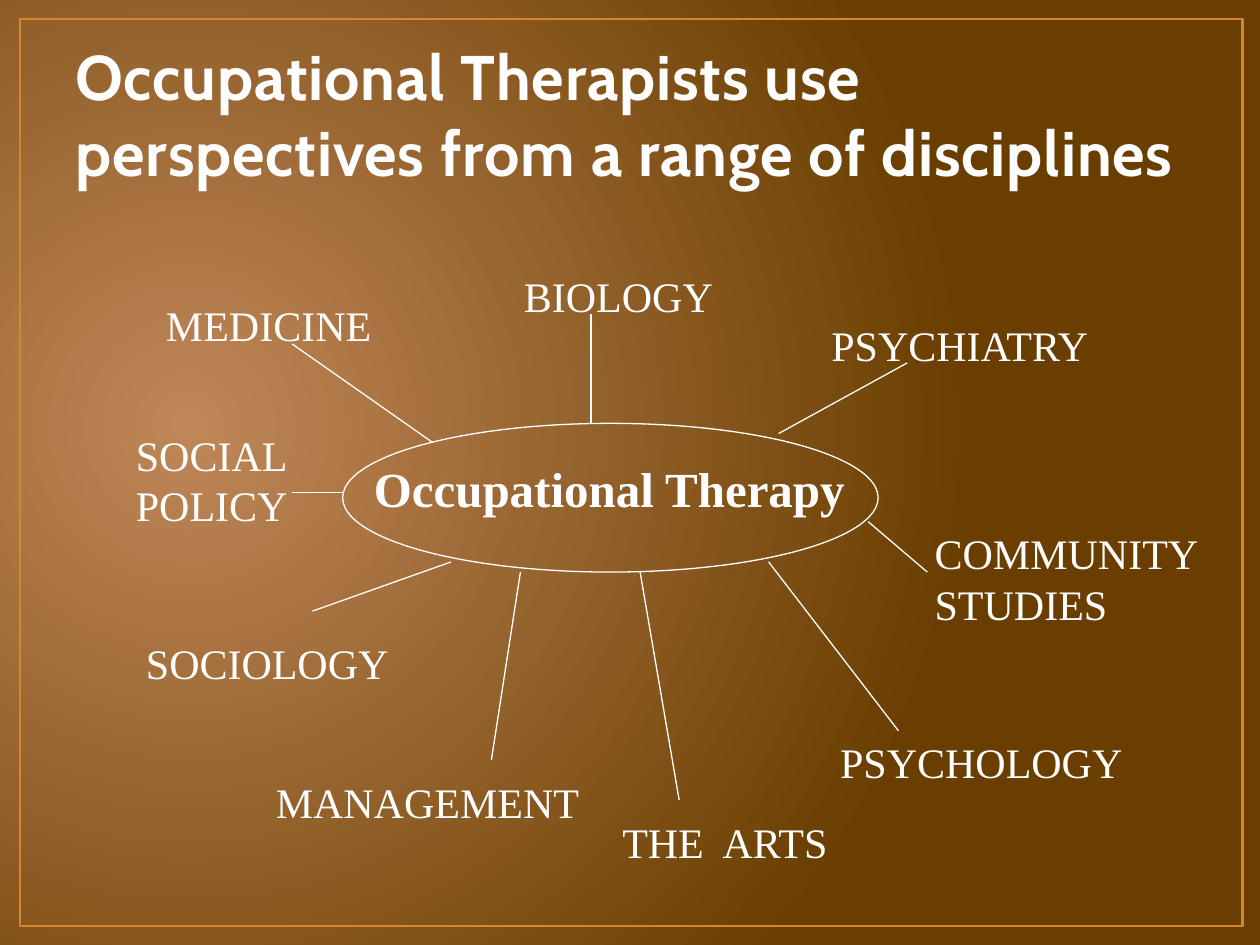
import pptx
import pptx.util
import pptx.dml.color
import pptx.enum.shapes
import pptx.enum.text
import lxml.etree

Pt = pptx.util.Pt
Shape = pptx.enum.shapes.MSO_SHAPE
Anchor = pptx.enum.text.MSO_ANCHOR
Fit = pptx.enum.text.MSO_AUTO_SIZE
NS = "{http://schemas.openxmlformats.org/drawingml/2006/main}"

WHITE = "FFFFFF"
GLOW = ["C08759", "693E00"]
TITLE = "Occupational Therapists use perspectives from a range of disciplines"
HUB = ("Occupational Therapy", 206.6, 258.5, 487.4, 41)

# text, left, top, width, height
FIELDS = [
    ("BIOLOGY", 292.3, 151.2, 187.2, 36),
    ("PSYCHOLOGY", 473, 417.6, 204.5, 36),
    ("SOCIOLOGY", 76.3, 360.7, 226.8, 36),
    ("SOCIAL POLICY", 70.6, 241.9, 175.7, 65),
    ("MEDICINE", 87.8, 167.8, 153.4, 36),
    ("PSYCHIATRY", 468, 179.3, 175.7, 36),
    ("COMMUNITY STUDIES", 527, 298.1, 193, 65),
    ("THE  ARTS", 348.5, 463, 215.3, 36),
    ("MANAGEMENT", 150.5, 439.9, 209.5, 36),
]

# from the hub (x, y) to the field (x, y)
SPOKES = [
    (195.8, 281.5, 167, 281.5),
    (257.8, 321.1, 178.6, 349.2),
    (297.4, 326.9, 280.8, 434.2),
    (365.8, 326.9, 388.1, 457.2),
    (439.2, 321.1, 513.4, 417.6),
    (496.1, 298.1, 529.9, 326.9),
    (445, 247.7, 518.4, 207.4),
    (337.7, 241.9, 337.7, 179.3),
    (247, 252.7, 167, 196.6),
]


def color(code):
    return pptx.dml.color.RGBColor.from_string(code)


def points(values):
    return [Pt(v) for v in values]


def stroke(line, code, width):
    line.color.rgb = color(code)
    line.width = Pt(width)


def style(font, name, size, code, bold=False):
    font.name, font.size, font.bold = name, Pt(size), bold
    font.color.rgb = color(code)


def glow(slide):
    """Fill the background with a round gradient centred on the left."""
    fill = slide.background.fill
    fill.gradient()
    for stop, code in zip(fill.gradient_stops, GLOW):
        stop.color.rgb = color(code)
    lin = next(slide.element.iter(NS + "lin"))
    path = lxml.etree.Element(NS + "path", path="circle")
    lxml.etree.SubElement(path, NS + "fillToRect",
                          l="15000", t="50000", r="85000", b="60000")
    lin.getparent().replace(lin, path)


def outline(run, code, width):
    """Space the letters by half a point and give them a thin edge."""
    props = run.font.fill._xPr
    props.set("spc", "50")
    edge = lxml.etree.Element(NS + "ln", w=str(int(Pt(width))))
    fill = lxml.etree.SubElement(edge, NS + "solidFill")
    lxml.etree.SubElement(fill, NS + "srgbClr", val=code)
    props.insert(0, edge)


def head(slide):
    title = slide.shapes.title
    title.left, title.top, title.width, title.height = points((36, 21.6, 648, 90))
    frame = title.text_frame
    frame.text = TITLE
    frame.auto_size = Fit.NONE
    frame.vertical_anchor = Anchor.BOTTOM
    para = frame.paragraphs[0]
    para.alignment = pptx.enum.text.PP_ALIGN.LEFT
    run = para.runs[0]
    style(run.font, "Cabin", 36, "FEFEFE", True)
    outline(run, "441B12", 1.05)


def ring(slide, kind, box, code, width):
    shape = slide.shapes.add_shape(kind, *points(box))
    shape.shadow.inherit = False
    shape.fill.background()
    stroke(shape.line, code, width)


def label(slide, text, *box, size=24, bold=False):
    frame = slide.shapes.add_textbox(*points(box)).text_frame
    frame.word_wrap = True
    frame.auto_size = Fit.SHAPE_TO_FIT_TEXT
    frame.text = text
    style(frame.paragraphs[0].font, "Times New Roman", size, WHITE, bold)


def spoke(slide, ends):
    kind = pptx.enum.shapes.MSO_CONNECTOR.STRAIGHT
    line = slide.shapes.add_connector(kind, *points(ends))
    stroke(line.line, WHITE, 0.75)
    lxml.etree.SubElement(line.element.spPr, NS + "effectLst")


def main():
    deck = pptx.Presentation()
    deck.slide_width, deck.slide_height = points((720, 540))
    slide = deck.slides.add_slide(deck.slide_layouts[5])
    glow(slide)
    ring(slide, Shape.RECTANGLE, (11.5, 10.8, 698.4, 518.4), "D6862D", 1.5)
    ring(slide, Shape.OVAL, (195.8, 241.9, 306, 85), WHITE, 0.75)
    head(slide)
    label(slide, *HUB, size=28, bold=True)
    for field in FIELDS:
        label(slide, *field)
    for ends in SPOKES:
        spoke(slide, ends)
    deck.save("out.pptx")


if __name__ == "__main__":
    main()
